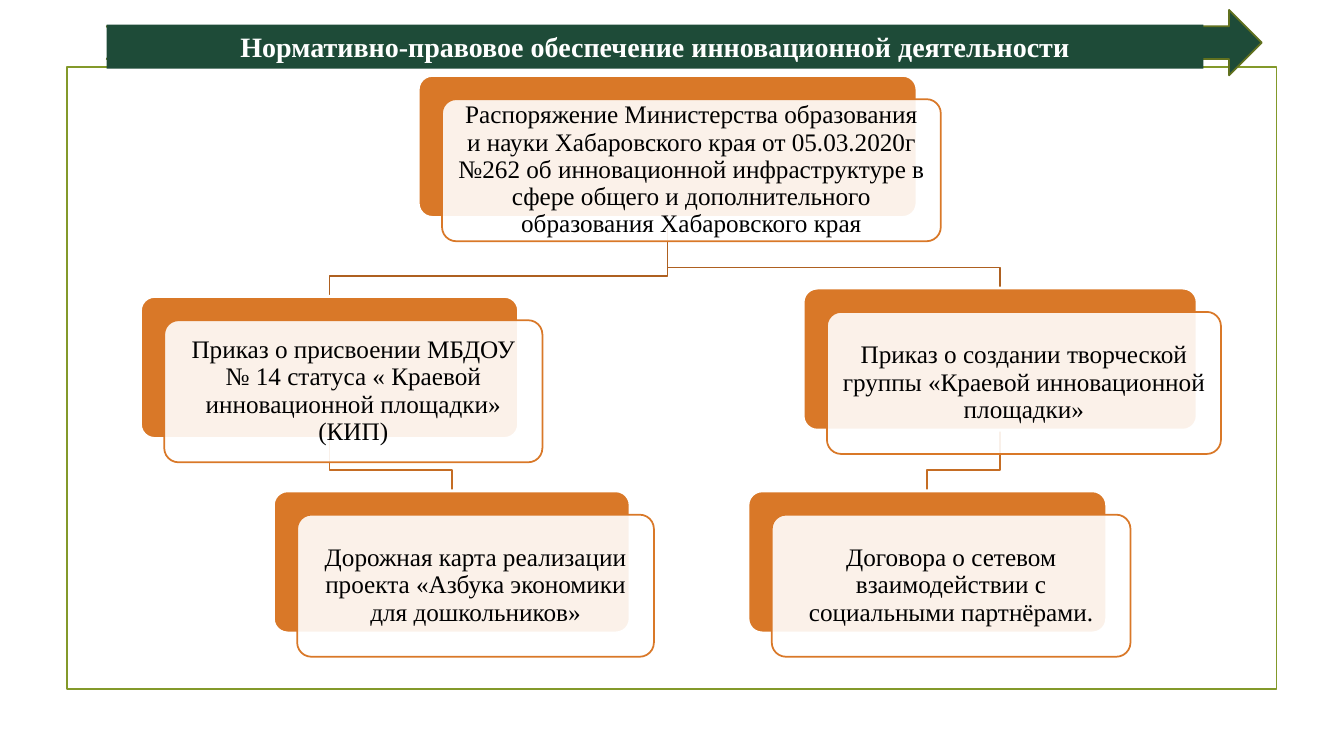
from lxml import etree
from pptx import Presentation
from pptx import util as u
from pptx.dml.color import RGBColor
from pptx.enum import shapes, text
from pptx.oxml.ns import qn

COLORS = {
    "frame": "83992A", "orange": "D97828", "white": "FFFFFF", "black": "000000",
    "green": "1E4B38", "arrow_edge": "61711F",
    "upper_link": "AE6020", "lower_link": "C56D24",
}
FONT = "Times New Roman"
CARD_HEIGHT = 3.58
FRONT_SHIFT = 0.6
BEND_ABOVE_CHILD = 0.52

# Left, top and width of each back plate in cm, and the wording of its card
CARDS = {
    "ministry": (10.54, 1.9, 12.57,
                 "Распоряжение Министерства образования и науки Хабаровского края "
                 "от 05.03.2020г №262 об инновационной инфраструктуре в сфере общего "
                 "и дополнительного образования Хабаровского края"),
    "status": (3.54, 7.47, 9.53,
               "Приказ о присвоении МБДОУ № 14 статуса « Краевой инновационной "
               "площадки» (КИП)"),
    "roadmap": (6.89, 12.37, 8.99,
                "Дорожная карта реализации проекта «Азбука экономики для дошкольников»"),
    "team": (20.24, 7.26, 9.93,
             "Приказ о создании творческой группы «Краевой инновационной площадки»"),
    "partners": (18.85, 12.37, 9.04,
                 "Договора о сетевом взаимодействии с социальными партнёрами."),
}
LINKS = [
    ("team", "partners", "lower_link"),
    ("ministry", "team", "upper_link"),
    ("status", "roadmap", "lower_link"),
    ("ministry", "status", "upper_link"),
]


def color(name):
    return RGBColor.from_string(COLORS[name])


def style(shape, fill=None, line=None, width=1.25):
    shape.shadow.inherit = False
    if fill:
        shape.fill.solid()
        shape.fill.fore_color.rgb = color(fill)
    else:
        shape.fill.background()
    if line:
        shape.line.color.rgb = color(line)
        shape.line.width = u.Pt(width)
    else:
        shape.line.fill.background()


def add_block(slide, preset, box, **look):
    block = slide.shapes.add_shape(preset, *(u.Cm(side) for side in box))
    style(block, **look)
    return block


def write(shape, wording, size, ink, bold=False, margin=0.25, spacing=1.0):
    frame = shape.text_frame
    frame.word_wrap = True
    frame.vertical_anchor = text.MSO_ANCHOR.MIDDLE
    frame.margin_left = frame.margin_right = u.Cm(margin)
    frame.margin_top = frame.margin_bottom = u.Cm(0.13)
    frame.text = wording
    paragraph = frame.paragraphs[0]
    paragraph.alignment = text.PP_ALIGN.CENTER
    paragraph.line_spacing = spacing
    font = paragraph.runs[0].font
    font.name, font.size, font.bold = FONT, u.Pt(size), bold
    font.color.rgb = color(ink)


def set_opacity(shape, percent):
    fill_color = shape.fill._xPr.find(qn("a:solidFill"))[0]
    etree.SubElement(fill_color, qn("a:alpha")).set("val", str(percent * 1000))


def add_link(slide, parent, child, ink):
    """Draw a stepped line from under the parent plate to the top of the child."""
    parent_left, parent_top, parent_width, _ = CARDS[parent]
    child_left, child_top, child_width, _ = CARDS[child]
    start_x = parent_left + parent_width / 2
    end_x = child_left + child_width / 2
    bend_y = child_top - BEND_ABOVE_CHILD
    steps = [(start_x, bend_y), (end_x, bend_y), (end_x, child_top)]
    builder = slide.shapes.build_freeform(u.Cm(start_x), u.Cm(parent_top + CARD_HEIGHT))
    builder.add_line_segments([(u.Cm(x), u.Cm(y)) for x, y in steps], close=False)
    style(builder.convert_to_shape(), line=ink)


def add_card(slide, left, top, width, wording):
    """Draw an orange plate with a translucent white card shifted over it."""
    rounded = shapes.MSO_SHAPE.ROUNDED_RECTANGLE
    plate = add_block(slide, rounded, (left, top, width, CARD_HEIGHT),
                      fill="orange", line="white", width=2)
    card = add_block(slide, rounded,
                     (left + FRONT_SHIFT, top + FRONT_SHIFT, width, CARD_HEIGHT),
                     fill="white", line="orange")
    plate.adjustments[0] = card.adjustments[0] = 0.1
    set_opacity(card, 90)
    write(card, wording, 18, "black", margin=0.28, spacing=0.9)


def add_banner(slide):
    add_block(slide, shapes.MSO_SHAPE.NOTCHED_RIGHT_ARROW, (2.69, 0.25, 29.11, 1.65),
              fill="green", line="arrow_edge")
    title = add_block(slide, shapes.MSO_SHAPE.RECTANGLE, (2.69, 0.62, 27.64, 1.11),
                      fill="green")
    write(title, "Нормативно-правовое обеспечение инновационной деятельности",
          20, "white", bold=True)


def main():
    deck = Presentation()
    deck.slide_width, deck.slide_height = u.Cm(33.87), u.Cm(19.05)
    slide = deck.slides.add_slide(deck.slide_layouts[6])
    add_block(slide, shapes.MSO_SHAPE.RECTANGLE, (1.69, 1.69, 30.48, 15.67), line="frame")
    for link in LINKS:
        add_link(slide, *link)
    for card in CARDS.values():
        add_card(slide, *card)
    add_banner(slide)
    deck.save("out.pptx")


if __name__ == "__main__":
    main()
